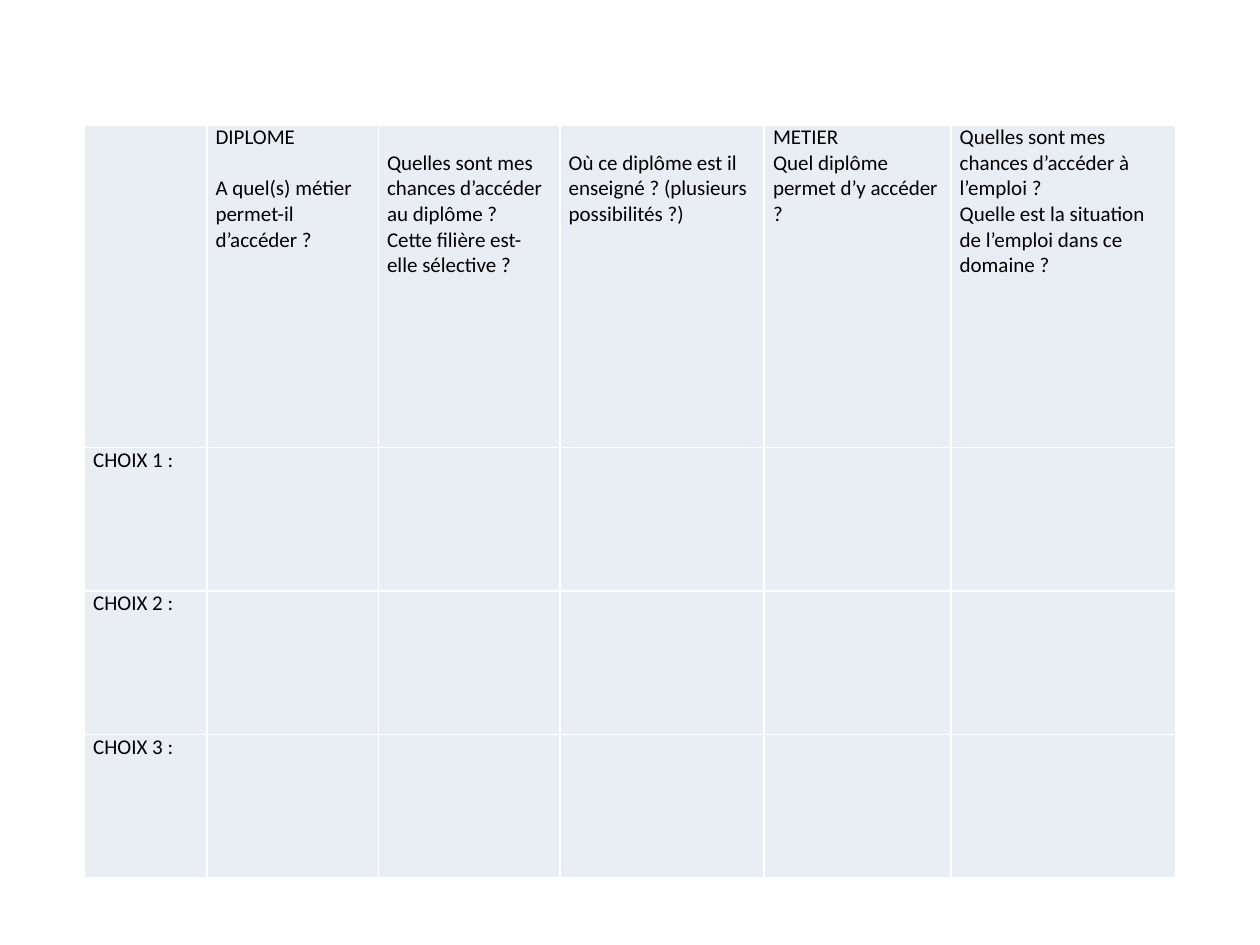
from lxml.etree import SubElement
from pptx import Presentation
from pptx.dml.color import RGBColor
from pptx.oxml.ns import qn
from pptx.util import Inches, Pt

COL_WIDTHS = [0.97, 1.36, 1.44, 1.62, 1.48, 1.78]
ROW_HEIGHTS = [2.56, 1.14, 1.14, 1.14]
LINE = 14.6

QUESTIONS = [
    [],
    ["DIPLOME", "A quel(s) métier permet-il d’accéder ?"],
    ["Quelles sont mes chances d’accéder au diplôme ?",
     "Cette filière est-elle sélective ?"],
    ["Où ce diplôme est il enseigné ? (plusieurs possibilités ?)"],
    ["METIER", "Quel diplôme permet d’y accéder ?"],
    ["Quelles sont mes chances d’accéder à l’emploi ?",
     "Quelle est la situation de l’emploi dans ce domaine ?"],
]
LOWERED_COLS = (2, 3)
SPACED_COL = 1


def rgb(value):
    """Turn a hex string into a colour."""
    return RGBColor.from_string(value)


def set_borders(cell, color, width):
    """Draw the four borders of a cell."""
    tcPr = cell._tc.get_or_add_tcPr()
    for side in ("a:lnL", "a:lnR", "a:lnT", "a:lnB"):
        ln = SubElement(tcPr, qn(side), w=str(Pt(width)))
        fill = SubElement(ln, qn("a:solidFill"))
        SubElement(fill, qn("a:srgbClr"), val=color)


def fill_cell(cell, lines):
    """Style a cell and write one paragraph per line."""
    set_borders(cell, "FFFFFF", 1)
    cell.fill.solid()
    cell.fill.fore_color.rgb = rgb("E9EDF4")
    cell.margin_left = cell.margin_right = Inches(0.07)
    cell.margin_top = cell.margin_bottom = 0
    tf = cell.text_frame
    tf.text = "\n".join(lines)
    for p in tf.paragraphs:
        p.font.name = "Calibri"
        p.font.size = Pt(12)
        p.font.color.rgb = rgb("000000")


def add_choice_table(s, left, top, width, height):
    """Place the table of questions and choices in the given box."""
    rows, cols = len(ROW_HEIGHTS), len(COL_WIDTHS)
    table = s.shapes.add_table(rows, cols, left, top, width, height).table
    table.first_row = table.horz_banding = False
    for col, share in zip(table.columns, COL_WIDTHS):
        col.width = int(width * share / sum(COL_WIDTHS))
    for row, share in zip(table.rows, ROW_HEIGHTS):
        row.height = int(height * share / sum(ROW_HEIGHTS))

    for c, lines in enumerate(QUESTIONS):
        fill_cell(table.cell(0, c), lines)
    for r in range(1, rows):
        for c in range(cols):
            fill_cell(table.cell(r, c), [] if c else [f"CHOIX {r} :"])

    for c in LOWERED_COLS:
        table.cell(0, c).margin_top = Pt(LINE)
    table.cell(0, SPACED_COL).text_frame.paragraphs[1].space_before = Pt(LINE)


def main():
    """Build and save the slide."""
    prs = Presentation()
    prs.slide_width, prs.slide_height = Inches(10), Inches(7.5)
    s = prs.slides.add_slide(prs.slide_layouts[6])
    add_choice_table(s, Inches(0.67), Inches(0.99), Inches(8.66), Inches(5.98))
    prs.save("out.pptx")


if __name__ == "__main__":
    main()
